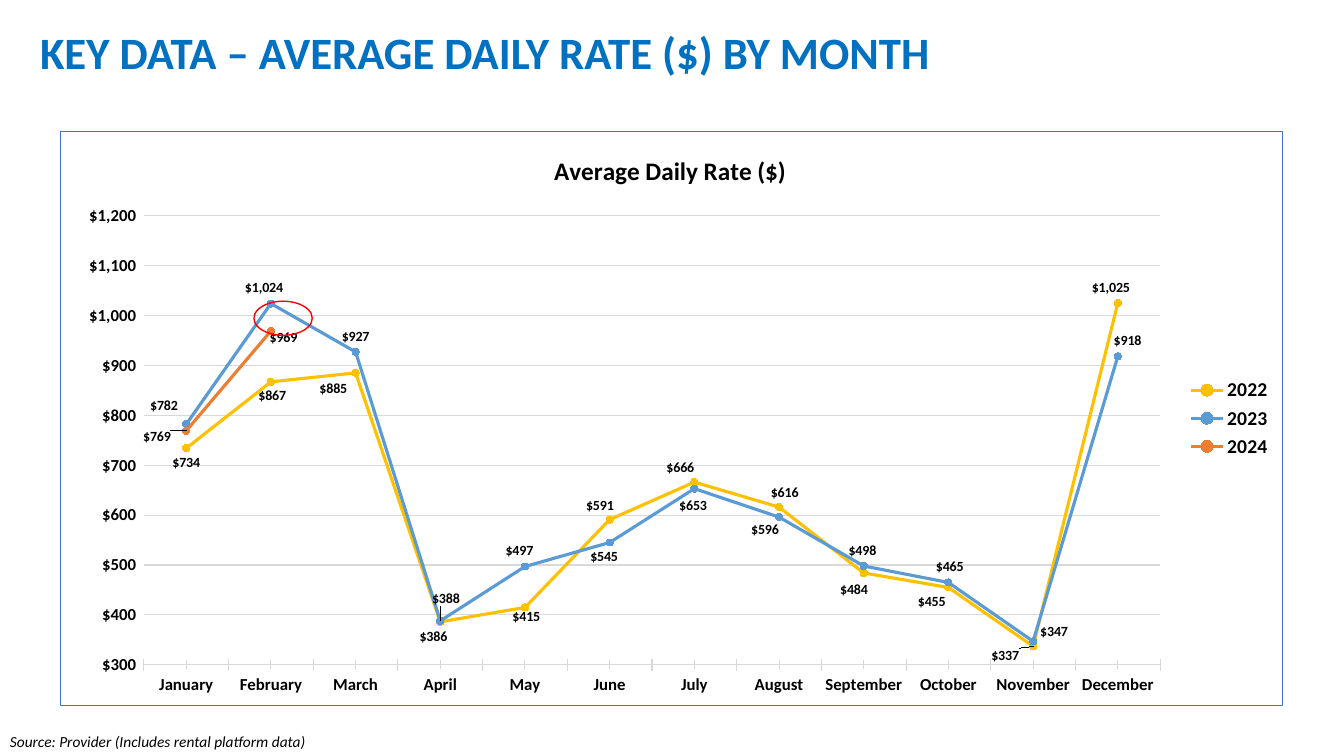
from dataclasses import dataclass

from lxml import etree
from pptx import Presentation
from pptx.chart.data import CategoryChartData
from pptx.dml.color import RGBColor
from pptx.enum.chart import (XL_CHART_TYPE, XL_LABEL_POSITION, XL_LEGEND_POSITION,
                             XL_MARKER_STYLE, XL_TICK_MARK)
from pptx.enum.shapes import MSO_SHAPE
from pptx.enum.text import MSO_ANCHOR
from pptx.oxml import parse_xml
from pptx.oxml.ns import nsdecls, qn
from pptx.util import Cm, Pt

LINE_MARKERS = XL_CHART_TYPE.LINE_MARKERS
CENTER = XL_LABEL_POSITION.CENTER
LEGEND_RIGHT = XL_LEGEND_POSITION.RIGHT
CIRCLE = XL_MARKER_STYLE.CIRCLE
TICK_CROSS = XL_TICK_MARK.CROSS
TICK_NONE = XL_TICK_MARK.NONE
ELLIPSE = MSO_SHAPE.OVAL
ANCHOR_MIDDLE = MSO_ANCHOR.MIDDLE
ANCHOR_TOP = MSO_ANCHOR.TOP


@dataclass(frozen=True)
class Theme:
    """Colours, font and type sizes of the slide."""
    font: str = "Calibri"
    heading: str = "0070C0"
    text: str = "000000"
    grid: str = "D9D9D9"
    border: str = "4472C4"
    highlight: str = "FF0000"
    heading_size: int = 32
    chart_title_size: int = 18
    legend_size: int = 14
    axis_size: int = 12
    source_size: int = 11
    label_size: int = 10


THEME = Theme()
DOLLARS = '"$"#,##0'
AXIS_DOLLARS = '"$"#,##0_)'
MONTHS = ["January", "February", "March", "April", "May", "June", "July",
          "August", "September", "October", "November", "December"]
RATES = {
    "2022": ("FFC000", [734, 867, 885, 386, 415, 591, 666, 616, 484, 455, 337, 1025]),
    "2023": ("5B9BD5", [782, 1024, 927, 388, 497, 545, 653, 596, 498, 465, 347, 918]),
    "2024": ("ED7D31", [769, 969] + [None] * 10),
}
LABEL_OFFSETS = {
    "2022": [(0, 10), (1, 10), (-16, 11), (-5, 11), (1, 7), (-7, -10), (-10, -10),
             (4, -10), (-7, 12), (-12, 10), (-20, 7), (-5, -11)],
    "2023": [(-16, -13), (-5, -11), (0, -11), (4, -16), (-4, -11), (-4, 10), (-1, 12),
             (-10, 9), (-1, -11), (1, -11), (15, -7), (7, -11)],
    "2024": [(-21, 4), (9, 5)],
}
NO_LEADER_LINES = (
    f'<c:extLst {nsdecls("c")}><c:ext uri="{{CE6537A1-D6FC-4f65-9D91-7224C49458BB}}" '
    'xmlns:c15="http://schemas.microsoft.com/office/drawing/2012/chart">'
    '<c15:showLeaderLines val="0"/></c:ext></c:extLst>')


def style_font(font, size, color=THEME.text, bold=False, italic=False):
    """Apply the theme font with the given format."""
    formats = {"name": THEME.font, "size": Pt(size), "bold": bold, "italic": italic}
    for name, value in formats.items():
        setattr(font, name, value)
    font.color.rgb = RGBColor.from_string(color)


def style_line(line, color, width):
    """Give a line its colour and width in points."""
    line.color.rgb = RGBColor.from_string(color)
    line.width = Pt(width)


def set_layout(parent, index, **values):
    """Set a manual layout, in fractions of the chart, on a chart element."""
    layout = parent.find(qn("c:layout"))
    if layout is None:
        layout = etree.Element(qn("c:layout"))
        parent.insert(index, layout)
    manual = etree.SubElement(layout, qn("c:manualLayout"))
    for name, value in values.items():
        etree.SubElement(manual, qn(f"c:{name}")).set("val", str(value))


def add_text(slide, box, text, anchor, margins, **formats):
    """Add one line of text in the given box."""
    frame = slide.shapes.add_textbox(*box).text_frame
    frame.word_wrap = True
    frame.vertical_anchor = anchor
    frame.margin_top = frame.margin_bottom = margins
    run = frame.paragraphs[0].add_run()
    run.text = text
    style_font(run.font, **formats)


def style_axes(chart):
    """Format both axes and the gridlines."""
    month_axis, rate_axis = chart.category_axis, chart.value_axis
    for axis in (month_axis, rate_axis):
        style_font(axis.tick_labels.font, THEME.axis_size, bold=True)
    month_axis.major_tick_mark = month_axis.minor_tick_mark = TICK_CROSS
    style_line(month_axis.format.line, THEME.grid, 0.75)
    scale = {"minimum_scale": 300, "maximum_scale": 1200, "major_unit": 100,
             "major_tick_mark": TICK_NONE, "has_major_gridlines": True}
    for name, value in scale.items():
        setattr(rate_axis, name, value)
    rate_axis.format.line.fill.background()
    style_line(rate_axis.major_gridlines.format.line, THEME.grid, 0.75)
    rate_axis.tick_labels.number_format = AXIS_DOLLARS
    rate_axis.tick_labels.number_format_is_linked = False


def style_series(series, width, height):
    """Colour one year's line and place its labels around the points."""
    color = RATES[series.name][0]
    style_line(series.format.line, color, 2.25)
    series.smooth = False
    series.marker.style = CIRCLE
    series.marker.size = 5
    series.marker.format.fill.solid()
    series.marker.format.fill.fore_color.rgb = RGBColor.from_string(color)
    style_line(series.marker.format.line, color, 0.75)
    labels = series.data_labels
    for index, (right, down) in enumerate(LABEL_OFFSETS[series.name]):
        label = series.points[index].data_label
        style_font(label.font, THEME.label_size, bold=True)
        label.position = CENTER
        element = labels._element.findall(qn("c:dLbl"))[index]
        set_layout(element, 1, x=round(Pt(right) / width, 4), y=round(Pt(down) / height, 4))
    labels.show_value = True
    labels.number_format = DOLLARS
    labels.number_format_is_linked = False
    style_font(labels.font, THEME.label_size, bold=True)
    labels._element.append(parse_xml(NO_LEADER_LINES))


def add_rate_chart(slide, box):
    """Add the bordered line chart of daily rates and the ring on February."""
    left, top, width, height = box
    data = CategoryChartData(number_format=DOLLARS)
    data.categories = MONTHS
    for year, (color, rates) in RATES.items():
        data.add_series(year, rates)
    chart = slide.shapes.add_chart(LINE_MARKERS, *box, data).chart
    style_font(chart.font, THEME.label_size)
    chart_space = chart._chartSpace
    chart_space.find(qn("c:txPr")).addprevious(parse_xml(
        f'<c:spPr {nsdecls("c", "a")}><a:noFill/><a:ln w="{Pt(0.75)}"><a:solidFill>'
        f'<a:srgbClr val="{THEME.border}"/></a:solidFill></a:ln></c:spPr>'))

    chart.has_title = True
    run = chart.chart_title.text_frame.paragraphs[0].add_run()
    run.text = "Average Daily Rate ($)"
    style_font(run.font, THEME.chart_title_size, bold=True)
    set_layout(chart.chart_title._element, 1, xMode="edge", yMode="edge", x=0.4, y=0.03)

    chart.has_legend = True
    chart.legend.position = LEGEND_RIGHT
    chart.legend.include_in_layout = False
    style_font(chart.legend.font, THEME.legend_size, bold=True)

    style_axes(chart)
    chart.plots[0].vary_by_categories = False
    for series in chart.plots[0].series:
        style_series(series, width, height)
    plot_area = chart_space.find(qn("c:chart")).find(qn("c:plotArea"))
    set_layout(plot_area, 0, layoutTarget="inner", xMode="edge", yMode="edge",
               x=0.068, y=0.147, w=0.832, h=0.783)

    ring = slide.shapes.add_shape(ELLIPSE, left + Cm(4.88), top + Cm(4.29), Cm(1.47), Cm(0.86))
    ring.shadow.inherit = False
    ring.fill.background()
    style_line(ring.line, THEME.highlight, 1)


def main():
    """Build the slide and save the presentation."""
    presentation = Presentation()
    presentation.slide_width, presentation.slide_height = Cm(33.87), Cm(19.05)
    slide = presentation.slides.add_slide(presentation.slide_layouts[6])
    add_text(slide, (Cm(0.76), Cm(0.67), Cm(25.4), Cm(1.25)),
             "KEY DATA – AVERAGE DAILY RATE ($) BY MONTH", ANCHOR_MIDDLE, 0,
             size=THEME.heading_size, color=THEME.heading, bold=True)
    add_text(slide, (Cm(0), Cm(18.31), Cm(9.45), Cm(0.74)),
             "Source: Provider (Includes rental platform data)", ANCHOR_TOP, Cm(0.13),
             size=THEME.source_size, italic=True)
    add_rate_chart(slide, (Cm(1.52), Cm(3.3), Cm(30.81), Cm(14.48)))
    presentation.save("out.pptx")


if __name__ == "__main__":
    main()
